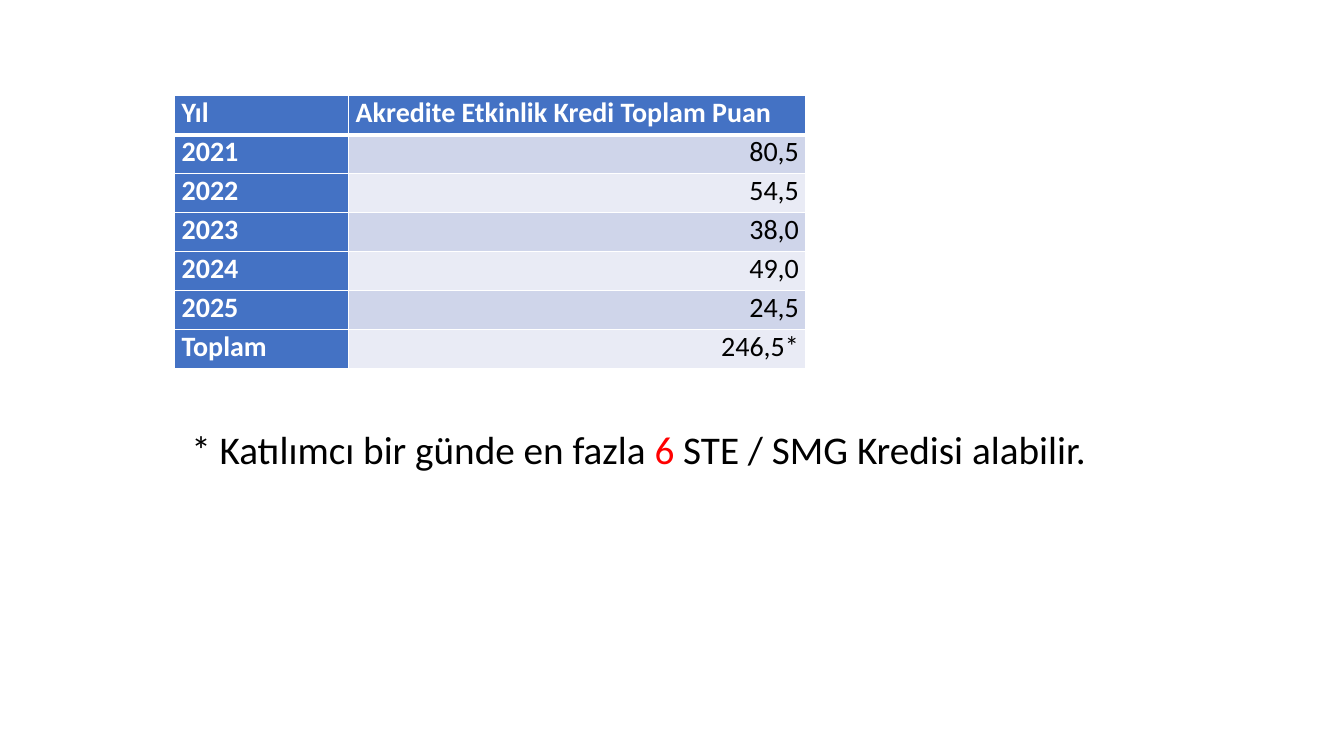
"""Build a slide with yearly accredited credit totals and a footnote."""
from lxml import etree
from pptx import Presentation
from pptx import util as u
from pptx.dml.color import RGBColor
from pptx.enum import text
from pptx.oxml.ns import qn

COLORS = {"header": "4472C4", "odd": "CFD5EA", "even": "E9EBF5",
          "white": "FFFFFF", "black": "000000", "red": "FF0000"}
ROWS = [("Yıl", "Akredite Etkinlik Kredi Toplam Puan"),
        ("2021", "80,5"), ("2022", "54,5"), ("2023", "38,0"),
        ("2024", "49,0"), ("2025", "24,5"), ("Toplam", "246,5*")]
COL_WIDTHS = (124.3, 326.6)
ROW_HEIGHT = 27.86
NOTE = [("* Katılımcı bir günde en fazla ", "black"), ("6 ", "red"),
        ("STE / SMG Kredisi alabilir.", "black")]


def style_run(r, size, color, bold=False):
    r.font.name = "Calibri"
    r.font.size = u.Pt(size)
    r.font.bold = bold
    r.font.color.rgb = RGBColor.from_string(COLORS[color])


def add_border(cell, side, width):
    ln = etree.SubElement(cell._tc.get_or_add_tcPr(), qn(f"a:ln{side}"), w=str(u.Pt(width)))
    fill = etree.SubElement(ln, qn("a:solidFill"))
    etree.SubElement(fill, qn("a:srgbClr"), val=COLORS["white"])


prs = Presentation()
prs.slide_width, prs.slide_height = u.Pt(960), u.Pt(540)
s = prs.slides.add_slide(prs.slide_layouts[6])

table = s.shapes.add_table(len(ROWS), 2, u.Pt(124.8), u.Pt(68.4),
                           u.Pt(sum(COL_WIDTHS)), u.Pt(ROW_HEIGHT * len(ROWS))).table
for col, width in zip(table.columns, COL_WIDTHS):
    col.width = u.Pt(width)
for i, values in enumerate(ROWS):
    table.rows[i].height = u.Pt(ROW_HEIGHT)
    for j, value in enumerate(values):
        cell = table.cell(i, j)
        heading = i == 0 or j == 0
        cell.margin_left = cell.margin_right = u.Pt(5)
        cell.margin_top = cell.margin_bottom = 0
        for side in "LRTB":
            add_border(cell, side, 3 if (i, side) in ((0, "B"), (1, "T")) else 1)
        cell.fill.solid()
        fill = "header" if heading else "odd" if i % 2 else "even"
        cell.fill.fore_color.rgb = RGBColor.from_string(COLORS[fill])
        cell.text_frame.text = value
        p = cell.text_frame.paragraphs[0]
        p.alignment = text.PP_ALIGN.LEFT if heading else text.PP_ALIGN.RIGHT
        style_run(p.runs[0], 20, "white" if heading else "black", heading)

tf = s.shapes.add_textbox(u.Pt(129.6), u.Pt(300.2), u.Pt(660.2), u.Pt(41)).text_frame
tf.word_wrap = False
tf.auto_size = text.MSO_AUTO_SIZE.SHAPE_TO_FIT_TEXT
for part, color in NOTE:
    r = tf.paragraphs[0].add_run()
    r.text = part
    style_run(r, 28, color)

prs.save("out.pptx")
